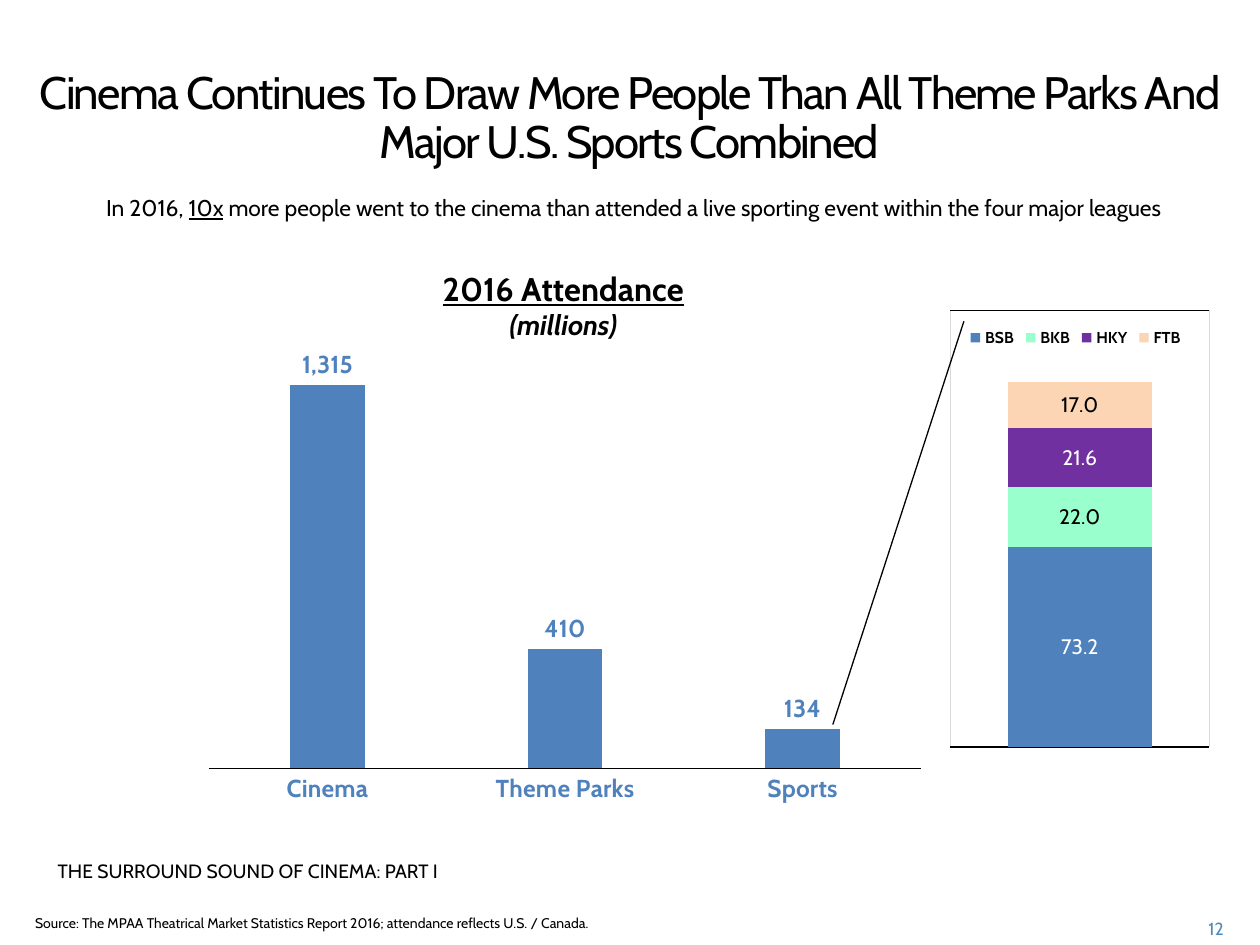
from lxml.etree import SubElement
from pptx import Presentation
from pptx.chart.data import CategoryChartData
from pptx.dml.color import RGBColor
from pptx.enum.chart import XL_CHART_TYPE, XL_LABEL_POSITION, XL_LEGEND_POSITION, XL_TICK_LABEL_POSITION, XL_TICK_MARK
from pptx.enum.shapes import MSO_CONNECTOR
from pptx.enum.text import PP_ALIGN
from pptx.oxml import parse_xml
from pptx.oxml.ns import nsdecls, qn
from pptx.util import Inches, Pt

FONT = "Cabin"
BLACK, WHITE, BLUE = "000000", "FFFFFF", "4F81BD"
TITLE = "Cinema Continues To Draw More People Than All Theme Parks And Major U.S. Sports Combined"
SUBTITLE = [
    ("In 2016, ", False),
    ("10x", True),
    (" more people went to the cinema than attended a live sporting event within the four major leagues", False),
]
SOURCE = "Source: The MPAA Theatrical Market Statistics Report 2016; attendance reflects U.S. / Canada."
TEXTS = [
    ([("12", False)], (9.2, 7.24, 0.61, 0.25), 10, "508ABA", PP_ALIGN.RIGHT),
    ([(SOURCE, False)], (0.18, 7.21, 7.72, 0.21), 8, BLACK, PP_ALIGN.LEFT),
    ([("THE SURROUND SOUND OF CINEMA: PART I", False)], (0.36, 6.77, 3.67, 0.47), 11, BLACK, PP_ALIGN.LEFT),
    (SUBTITLE, (0.18, 1.49, 9.69, 0.32), 13, BLACK, PP_ALIGN.CENTER),
]
ATTENDANCE = {"Cinema": 1315, "Theme Parks": 410, "Sports": 134}
LEAGUES = [
    ("BSB", 73.2, BLUE, WHITE),
    ("BKB", 22.0, "99FFCC", BLACK),
    ("HKY", 21.6, "7030A0", WHITE),
    ("FTB", 17.0, "FCD5B5", BLACK),
]


def color(value):
    """Turn a hex string into a colour."""
    return RGBColor.from_string(value)


def style(font, size, fill, bold=False):
    """Set the face, size, colour and weight of a font."""
    font.name, font.size, font.bold = FONT, Pt(size), bold
    font.color.rgb = color(fill)


def draw_line(line, fill, width):
    """Set the colour and width of a line."""
    line.color.rgb, line.width = color(fill), Pt(width)


def add_text(page, spans, place, size, fill, align):
    """Add a one-paragraph text box and return its paragraph."""
    frame = page.shapes.add_textbox(*map(Inches, place)).text_frame
    frame.word_wrap = True
    para = frame.paragraphs[0]
    para.alignment = align
    style(para.font, size, fill)
    for text, underlined in spans:
        span = para.add_run()
        span.text = text
        if underlined:
            span.font.underline = True
    return para


def add_chart(page, kind, place, categories, series, gap, overlap):
    """Add a column chart with plain defaults and return it."""
    data = CategoryChartData()
    data.categories = categories
    for name, values in series:
        data.add_series(name, values)
    chart = page.shapes.add_chart(kind, *map(Inches, place), data).chart
    style(chart.font, 10, BLACK)
    chart.has_title = chart.has_legend = False
    chart.value_axis.visible = False
    chart.value_axis.minimum_scale = 0
    plot = chart.plots[0]
    plot.vary_by_categories = False
    plot.gap_width, plot.overlap = gap, overlap
    return chart


def label_series(series, fill, size, ink, number_format, position, bold=False):
    """Fill a series and show its values."""
    series.format.fill.solid()
    series.format.fill.fore_color.rgb = color(fill)
    labels = series.data_labels
    labels.show_value = True
    labels.number_format, labels.number_format_is_linked = number_format, False
    labels.position = position
    style(labels.font, size, ink, bold)


def set_layout(element, before, inner=False, **fractions):
    """Place a chart part by fractions of the chart area."""
    for old in element.findall(qn("c:layout")):
        element.remove(old)
    target = '<c:layoutTarget val="inner"/>' if inner else ""
    modes = '<c:xMode val="edge"/><c:yMode val="edge"/>'
    sizes = "".join(f'<c:{name} val="{value}"/>' for name, value in fractions.items())
    layout = parse_xml(
        f'<c:layout {nsdecls("c")}><c:manualLayout>{target}{modes}{sizes}</c:manualLayout></c:layout>')
    if before is None:
        element.insert(0, layout)
    else:
        element.find(qn(before)).addnext(layout)


def plot_area(chart):
    """Return the plot area element of a chart."""
    return chart.plots[0]._element.getparent()


def add_attendance(page):
    """Add the chart of total attendance."""
    chart = add_chart(page, XL_CHART_TYPE.COLUMN_CLUSTERED, (1.54, 1.96, 5.89, 4.5),
                      list(ATTENDANCE), [("Series 1", list(ATTENDANCE.values()))], 219, -27)
    chart.value_axis.maximum_scale = 1400
    chart.value_axis.has_major_gridlines = False
    axis = chart.category_axis
    axis.major_tick_mark = XL_TICK_MARK.NONE
    style(axis.tick_labels.font, 14, BLUE, True)
    draw_line(axis.format.line, BLACK, 0.75)
    label_series(chart.plots[0].series[0], BLUE, 14, BLUE, "#,##0", XL_LABEL_POSITION.OUTSIDE_END, True)
    frame = chart.chart_title.text_frame
    heading, unit = frame.paragraphs[0], frame.add_paragraph()
    for para, text, size in ((heading, "2016 Attendance", 18.7), (unit, "(millions)", 16)):
        style(para.font, size, BLACK, True)
        para.add_run().text = text
    heading.runs[0].font.underline = True
    unit.runs[0].font.italic = True
    set_layout(chart.chart_title._element, "c:tx", x=0.33, y=0.03)
    set_layout(plot_area(chart), None, True, x=0.02, y=0.2, w=0.96, h=0.72)


def add_leagues(page):
    """Add the stacked chart of the four leagues."""
    chart = add_chart(page, XL_CHART_TYPE.COLUMN_STACKED, (7.5, 2.07, 2.14, 3.94), ["1"],
                      [(name, [value]) for name, value, _, _ in LEAGUES], 79, 100)
    values, axis = chart.value_axis, chart.category_axis
    values.maximum_scale = values.major_unit = 160
    draw_line(values.major_gridlines.format.line, BLACK, 1)
    axis.has_major_gridlines = True
    draw_line(axis.major_gridlines.format.line, "D9D9D9", 0.75)
    axis.tick_label_position = XL_TICK_LABEL_POSITION.NONE
    axis.visible = False
    for series, (_, _, fill, ink) in zip(chart.plots[0].series, LEAGUES):
        label_series(series, fill, 12, ink, "#,##0.0", XL_LABEL_POSITION.CENTER)
    chart.has_legend = True
    legend = chart.legend
    legend.position, legend.include_in_layout = XL_LEGEND_POSITION.TOP, False
    style(legend.font, 9, BLACK, True)
    set_layout(legend._element, "c:legendPos", x=0.07, y=0.13, w=0.83, h=0.05)
    set_layout(plot_area(chart), None, True, x=0.02, y=0.1, w=0.96, h=0.88)


def main():
    """Build the attendance slide."""
    deck = Presentation()
    deck.slide_width, deck.slide_height = Inches(10), Inches(7.5)
    page = deck.slides.add_slide(deck.slide_layouts[6])
    title = add_text(page, [(TITLE, False)], (0.18, 0.5, 9.63, 0.76), 26, BLACK, PP_ALIGN.CENTER)
    title.line_spacing = Pt(28)
    title.runs[0].font._element.set("spc", "-100")
    add_attendance(page)
    add_leagues(page)
    callout = page.shapes.add_connector(MSO_CONNECTOR.STRAIGHT, *map(Inches, (7.65, 2.55, 6.61, 5.75)))
    draw_line(callout.line, BLACK, 0.75)
    SubElement(callout._element.spPr, qn("a:effectLst"))
    for text in TEXTS:
        add_text(page, *text)
    deck.save("out.pptx")


if __name__ == "__main__":
    main()
